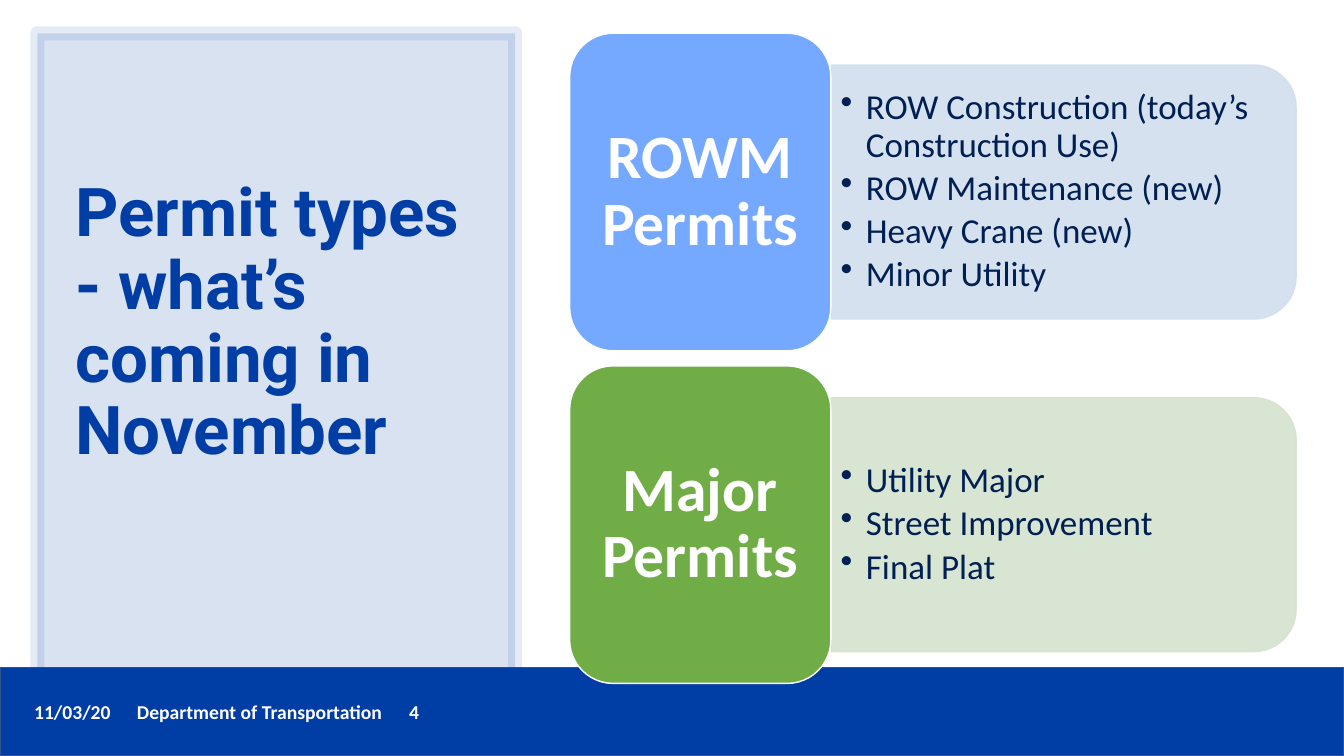
from dataclasses import dataclass

from lxml import etree
from pptx import Presentation
from pptx.dml.color import RGBColor
from pptx.enum.shapes import MSO_SHAPE
from pptx.enum.text import MSO_ANCHOR, PP_ALIGN
from pptx.oxml.ns import qn
from pptx.shapes.autoshape import Shape
from pptx.slide import Slide
from pptx.text.text import TextFrame, _Paragraph
from pptx.util import Inches, Pt

RECT = MSO_SHAPE.RECTANGLE
ROUNDED = MSO_SHAPE.ROUNDED_RECTANGLE
ROUNDED_TOP = MSO_SHAPE.ROUND_2_SAME_RECTANGLE
MIDDLE = MSO_ANCHOR.MIDDLE
CENTER = PP_ALIGN.CENTER


@dataclass(frozen=True)
class Theme:
    navy: str = "003DA5"
    footer_edge: str = "31538F"
    ink: str = "001F52"
    white: str = "FFFFFF"
    heading_font: str = "Roboto"
    body_font: str = "Calibri"
    title_size: float = 48
    card_size: float = 44
    item_size: float = 25
    footer_size: float = 14
    line_spacing: float = 0.9


@dataclass(frozen=True)
class Box:
    left: float
    top: float
    width: float
    height: float

    def lowered(self, distance: float) -> "Box":
        return Box(self.left, self.top + distance, self.width, self.height)

    def emu(self) -> list[int]:
        return [Inches(v) for v in (self.left, self.top, self.width, self.height)]


@dataclass(frozen=True)
class PermitGroup:
    name: str
    color: str
    tint: str
    items: tuple[str, ...]


THEME = Theme()
GROUPS = (
    PermitGroup("ROWM Permits", "75A8FF", "D2DEEF", (
        "ROW Construction (today’s Construction Use)",
        "ROW Maintenance (new)",
        "Heavy Crane (new)",
        "Minor Utility",
    )),
    PermitGroup("Major Permits", "70AD47", "D5E3CF", (
        "Utility Major",
        "Street Improvement",
        "Final Plat",
    )),
)
GROUP_PITCH = 3.3
CARD = Box(5.65, 0.33, 2.59, 3.15)
TAB = Box(9.29, -0.4, 2.52, 4.61)  # before its quarter turn
ITEMS = Box(8.24, 0.77, 4.49, 2.27)
TITLE_BOTTOM_INSET = 0.77
FOOTER_TABS = (1.02, 3.72)


def set_alpha(properties: etree._Element, percent: int) -> None:
    for color in properties.iter(qn("a:srgbClr")):
        etree.SubElement(color, qn("a:alpha"), val=str(percent * 1000))


def add_block(slide: Slide, kind: int, box: Box, fill: str, edge: str,
              edge_width: float = 1, fill_alpha: int = 100,
              edge_alpha: int = 100) -> Shape:
    block = slide.shapes.add_shape(kind, *box.emu())
    block.shadow.inherit = False
    block.fill.solid()
    block.fill.fore_color.rgb = RGBColor.from_string(fill)
    if fill_alpha < 100:
        set_alpha(block.element.spPr, fill_alpha)
    block.line.color.rgb = RGBColor.from_string(edge)
    block.line.width = Pt(edge_width)
    if edge_alpha < 100:
        set_alpha(block.element.spPr.find(qn("a:ln")), edge_alpha)
    return block


def add_text_area(slide: Slide, box: Box) -> TextFrame:
    frame = slide.shapes.add_textbox(*box.emu()).text_frame
    frame.word_wrap = True
    return frame


def add_run(paragraph: _Paragraph, text: str, size: float, color: str,
            font: str = THEME.body_font, bold: bool = True) -> None:
    run = paragraph.add_run()
    run.text = text
    run.font.name = font
    run.font.size = Pt(size)
    run.font.bold = bold
    run.font.color.rgb = RGBColor.from_string(color)


def add_footer(slide: Slide) -> None:
    add_block(slide, RECT, Box(0, 6.62, 13.33, 0.88), THEME.navy, THEME.footer_edge)
    line = add_text_area(slide, Box(0.24, 6.89, 10.06, 0.34)).paragraphs[0]
    stops = etree.SubElement(line._p.get_or_add_pPr(), qn("a:tabLst"))
    for position in FOOTER_TABS:
        etree.SubElement(stops, qn("a:tab"), pos=str(Inches(position)), algn="l")
    add_run(line, "11/03/20\tDepartment of Transportation\t4",
            THEME.footer_size, THEME.white)


def add_title(slide: Slide) -> None:
    add_block(slide, RECT, Box(0.37, 0.33, 4.74, 6.45), THEME.navy, THEME.navy,
              edge_width=10, fill_alpha=15, edge_alpha=10)
    frame = add_text_area(slide, Box(0.65, 0.7, 4.16, 5.75))
    frame.vertical_anchor = MIDDLE
    frame.margin_bottom = Inches(TITLE_BOTTOM_INSET)
    title = frame.paragraphs[0]
    title.line_spacing = THEME.line_spacing
    add_run(title, "Permit types - what’s coming in November",
            THEME.title_size, THEME.navy, THEME.heading_font)


def add_items(slide: Slide, box: Box, items: tuple[str, ...]) -> None:
    frame = add_text_area(slide, box)
    frame.vertical_anchor = MIDDLE
    for index, text in enumerate(items):
        item = frame.add_paragraph() if index else frame.paragraphs[0]
        item.level = 1
        item.line_spacing = THEME.line_spacing
        item.space_after = Pt(THEME.item_size * 0.15)
        properties = item._p.get_or_add_pPr()
        properties.set("marL", str(Inches(0.25)))
        properties.set("indent", str(Inches(-0.25)))
        etree.SubElement(properties, qn("a:buChar"), char="•")
        add_run(item, text, THEME.item_size, THEME.ink, bold=False)


def add_group(slide: Slide, group: PermitGroup, drop: float) -> None:
    # Tinted tab with the list of permits
    tab = add_block(slide, ROUNDED_TOP, TAB.lowered(drop), group.tint, group.tint,
                    fill_alpha=90, edge_alpha=90)
    tab.rotation = 90
    add_items(slide, ITEMS.lowered(drop), group.items)

    # Card with the group name
    card = add_block(slide, ROUNDED, CARD.lowered(drop), group.color, THEME.white)
    frame = card.text_frame
    frame.word_wrap = True
    frame.vertical_anchor = MIDDLE
    frame.margin_left = frame.margin_right = Inches(0.18)
    frame.margin_top = frame.margin_bottom = Inches(0.09)
    name = frame.paragraphs[0]
    name.alignment = CENTER
    name.line_spacing = THEME.line_spacing
    add_run(name, group.name, THEME.card_size, THEME.white)


def main() -> None:
    deck = Presentation()
    deck.slide_width = Inches(13.33)
    deck.slide_height = Inches(7.5)
    slide = deck.slides.add_slide(deck.slide_layouts[6])
    add_footer(slide)
    add_title(slide)
    for index, group in enumerate(GROUPS):
        add_group(slide, group, index * GROUP_PITCH)
    deck.save("out.pptx")


if __name__ == "__main__":
    main()
